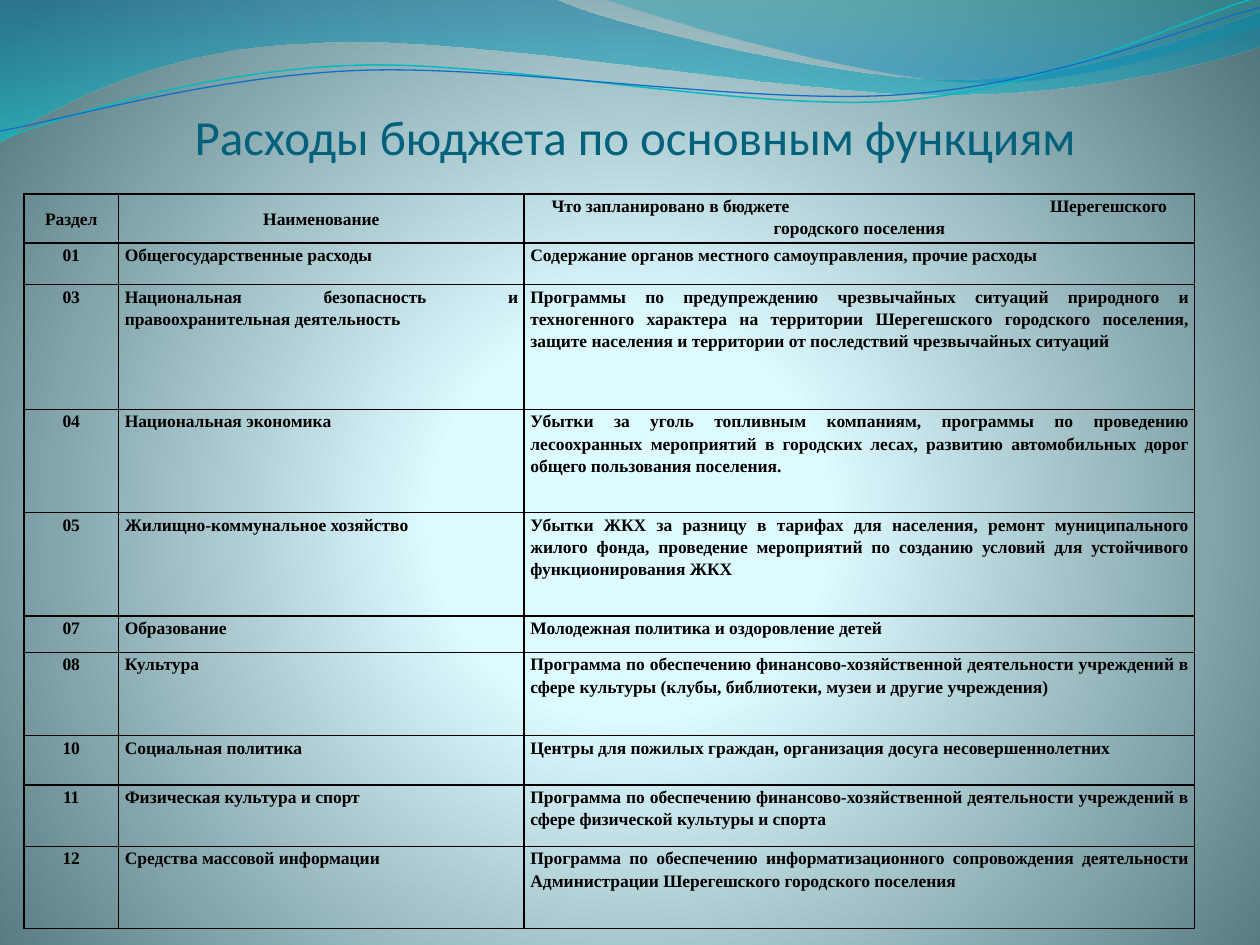
from lxml.etree import SubElement
from pptx import Presentation
from pptx.dml.color import RGBColor
from pptx.enum.text import MSO_ANCHOR, PP_ALIGN
from pptx.oxml import parse_xml
from pptx.oxml.ns import nsdecls, qn
from pptx.util import Inches, Pt

COLORS = {
    "title": "04617B", "text": "000000", "border": "000000",
    "glow": "DEFBFF", "glow_mid": "DDFAFF", "edge": "52767C",
    "blue": "0074A1", "cyan": "00C6CF", "teal": "00A1A9", "sky": "008BBF",
    "cyan_line": "0AB8BF", "blue_line": "0F6FC6",
}
DOWN = '<a:lin ang="5400000" scaled="1"/>'
RADIAL = ('<a:path path="circle">'
          '<a:fillToRect l="10000" t="110000" r="10000" b="100000"/></a:path>')

# Waves: start point, then line ends (2 numbers) or Bezier curves (6 numbers)
LEFT_WAVE = [(0, 0), (4.4, -0.01), (4.76, 0.17, 6.64, 0.63, 7.58, 0.63),
             (8.53, 0.63, 9.58, 0.26, 10, 0.09), (10.01, 0.36),
             (9.83, 0.44, 8.7, 0.76, 7.46, 0.75),
             (6.22, 0.75, 3.82, 0.28, 2.57, 0.34),
             (1.29, 0.36, 0.46, 0.83, -0.01, 1.13), (0, 0)]
RIGHT_WAVE = [(4.79, -0.01), (5.09, 0.11, 6.82, 0.62, 7.69, 0.65),
              (8.56, 0.69, 9.61, 0.32, 10, 0.21), (10, 0), (4.79, -0.01)]
CYAN_WAVE = [(0, 1.11), (0.48, 0.93, 1.58, 0.57, 2.77, 0.52),
             (3.95, 0.47, 5.93, 0.89, 7.13, 0.8),
             (8.33, 0.71, 9.38, 0.15, 9.98, -0.02)]
BLUE_WAVE = [(0, 1.04), (0.47, 0.96, 1.64, 0.61, 2.83, 0.56),
             (4.03, 0.51, 5.97, 0.84, 7.17, 0.75),
             (8.36, 0.67, 9.41, 0.21, 10, 0.06)]

COL_WIDTHS = [0.75, 3.22, 5.32]
ROW_HEIGHTS = [0.39, 0.33, 0.99, 0.82, 0.82, 0.29, 0.66, 0.39, 0.49, 0.65]
WIDE_SPACE = 146.5  # points added to the space between the bars
ROWS = [
    ("Раздел", "Наименование",
     "Что запланировано в бюджете| |Шерегешского городского поселения"),
    ("01", "Общегосударственные расходы",
     "Содержание органов местного самоуправления, прочие расходы"),
    ("03", "Национальная безопасность и правоохранительная деятельность",
     "Программы по предупреждению чрезвычайных ситуаций природного и "
     "техногенного характера на территории Шерегешского городского поселения, "
     "защите населения и территории от последствий чрезвычайных ситуаций"),
    ("04", "Национальная экономика",
     "Убытки за уголь топливным компаниям, программы по проведению "
     "лесоохранных мероприятий в городских лесах, развитию автомобильных дорог "
     "общего пользования поселения."),
    ("05", "Жилищно-коммунальное хозяйство",
     "Убытки ЖКХ за разницу в тарифах для населения, ремонт муниципального "
     "жилого фонда, проведение мероприятий по созданию условий для устойчивого "
     "функционирования ЖКХ"),
    ("07", "Образование", "Молодежная политика и оздоровление детей"),
    ("08", "Культура",
     "Программа по обеспечению финансово-хозяйственной деятельности учреждений "
     "в сфере культуры (клубы, библиотеки, музеи и другие учреждения)"),
    ("10", "Социальная политика",
     "Центры для пожилых граждан, организация досуга несовершеннолетних"),
    ("11", "Физическая культура и спорт",
     "Программа по обеспечению финансово-хозяйственной деятельности учреждений "
     "в сфере физической культуры и спорта"),
    ("12", "Средства массовой информации",
     "Программа по обеспечению информатизационного сопровождения деятельности "
     "Администрации Шерегешского городского поселения"),
]


def rgb(name):
    return RGBColor.from_string(COLORS[name])


def set_gradient(fill, parent, stops, direction):
    """Stops are (position %, colour name, opacity %)."""
    fill.gradient()
    gs = "".join(
        f'<a:gs pos="{pos * 1000}"><a:srgbClr val="{COLORS[name]}">'
        f'<a:alpha val="{alpha * 1000}"/></a:srgbClr></a:gs>'
        for pos, name, alpha in stops)
    grad = parse_xml(f'<a:gradFill {nsdecls("a")} rotWithShape="1">'
                     f'<a:gsLst>{gs}</a:gsLst>{direction}</a:gradFill>')
    parent.replace(parent.find(qn("a:gradFill")), grad)


def add_wave(s, outline, close):
    """Build the outline, then join every three curve points into a Bezier."""
    points = [(part[i] * 1000, part[i + 1] * 1000)
              for part in outline for i in range(0, len(part), 2)]
    builder = s.shapes.build_freeform(*points[0], scale=Inches(1) / 1000)
    builder.add_line_segments(points[1:], close=close)
    sp = builder.convert_to_shape()
    lines = iter(sp._element.xpath(".//a:path/a:lnTo"))
    for part in outline[1:]:
        line = next(lines)
        if len(part) == 6:
            line.tag = qn("a:cubicBezTo")
            for extra in (next(lines), next(lines)):
                line.append(extra[0])
                extra.getparent().remove(extra)
    sp.shadow.inherit = False
    return sp


def add_wave_area(s, outline, stops):
    sp = add_wave(s, outline, True)
    set_gradient(sp.fill, sp._element.spPr, stops, DOWN)
    sp.line.fill.background()


def add_wave_line(s, outline, color, width):
    sp = add_wave(s, outline, False)
    sp.fill.background()
    sp.line.color.rgb = rgb(color)
    sp.line.width = Pt(width)


def format_run(r, font, size, color, bold=False):
    r.font.name, r.font.size, r.font.bold = font, Pt(size), bold
    r.font.color.rgb = rgb(color)


def set_title(s, text):
    sp = s.shapes.title
    sp.left, sp.top, sp.width, sp.height = map(Inches, (0.5, 0.77, 9.08, 0.54))
    tf = sp.text_frame
    tf.text = text
    tf.vertical_anchor = MSO_ANCHOR.BOTTOM
    tf.margin_left = tf.margin_right = tf.margin_bottom = 0
    tf.margin_top = Inches(0.05)
    p = tf.paragraphs[0]
    p.alignment = PP_ALIGN.CENTER
    format_run(p.runs[0], "Calibri", 28, "title")
    s.shapes._spTree.append(sp._element)  # in front of the waves


def set_borders(cell):
    tcPr = cell._tc.get_or_add_tcPr()
    for side in ("a:lnL", "a:lnR", "a:lnT", "a:lnB"):
        ln = SubElement(tcPr, qn(side), w=str(Pt(1)))
        SubElement(SubElement(ln, qn("a:solidFill")), qn("a:srgbClr"),
                   val=COLORS["border"])


def fill_cell(cell, text, align, anchor):
    set_borders(cell)
    cell.fill.background()
    cell.margin_left = cell.margin_right = Inches(0.05)
    cell.margin_top = cell.margin_bottom = 0
    cell.vertical_anchor = anchor
    p = cell.text_frame.paragraphs[0]
    p.alignment, p.line_spacing = align, 1.15
    for part in text.split("|"):
        r = p.add_run()
        r.text = part
        format_run(r, "Times New Roman", 10, "text", True)
        if part == " ":
            r._r.get_or_add_rPr().set("spc", str(int(WIDE_SPACE * 100)))


def add_budget_table(s):
    table = s.shapes.add_table(
        len(ROWS), len(COL_WIDTHS), Inches(0.19), Inches(1.54),
        Inches(sum(COL_WIDTHS)), Inches(sum(ROW_HEIGHTS))).table
    table.first_row = table.horz_banding = False
    for col, width in zip(table.columns, COL_WIDTHS):
        col.width = Inches(width)
    for i, (row, height) in enumerate(zip(table.rows, ROW_HEIGHTS)):
        row.height = Inches(height)
        for j, text in enumerate(ROWS[i]):
            centred = i == 0 or j == 0
            fill_cell(row.cells[j], text,
                      PP_ALIGN.CENTER if centred else PP_ALIGN.JUSTIFY,
                      MSO_ANCHOR.MIDDLE if i == 0 and j < 2 else MSO_ANCHOR.TOP)


def main():
    prs = Presentation()
    prs.slide_width, prs.slide_height = Inches(10), Inches(7.5)
    s = prs.slides.add_slide(prs.slide_layouts[5])

    # Background and waves
    fill = s.background.fill
    fill.solid()
    set_gradient(fill, s._element.xpath(".//p:bgPr")[0],
                 [(0, "glow", 100), (25, "glow_mid", 100), (100, "edge", 100)], RADIAL)
    add_wave_area(s, LEFT_WAVE, [(0, "blue", 45), (100, "cyan", 55)])
    add_wave_area(s, RIGHT_WAVE, [(0, "teal", 30), (80, "sky", 45)])
    add_wave_line(s, CYAN_WAVE, "cyan_line", 0.85)
    add_wave_line(s, BLUE_WAVE, "blue_line", 0.75)

    # Title and table
    set_title(s, "Расходы бюджета по основным функциям")
    add_budget_table(s)
    prs.save("out.pptx")


if __name__ == "__main__":
    main()
